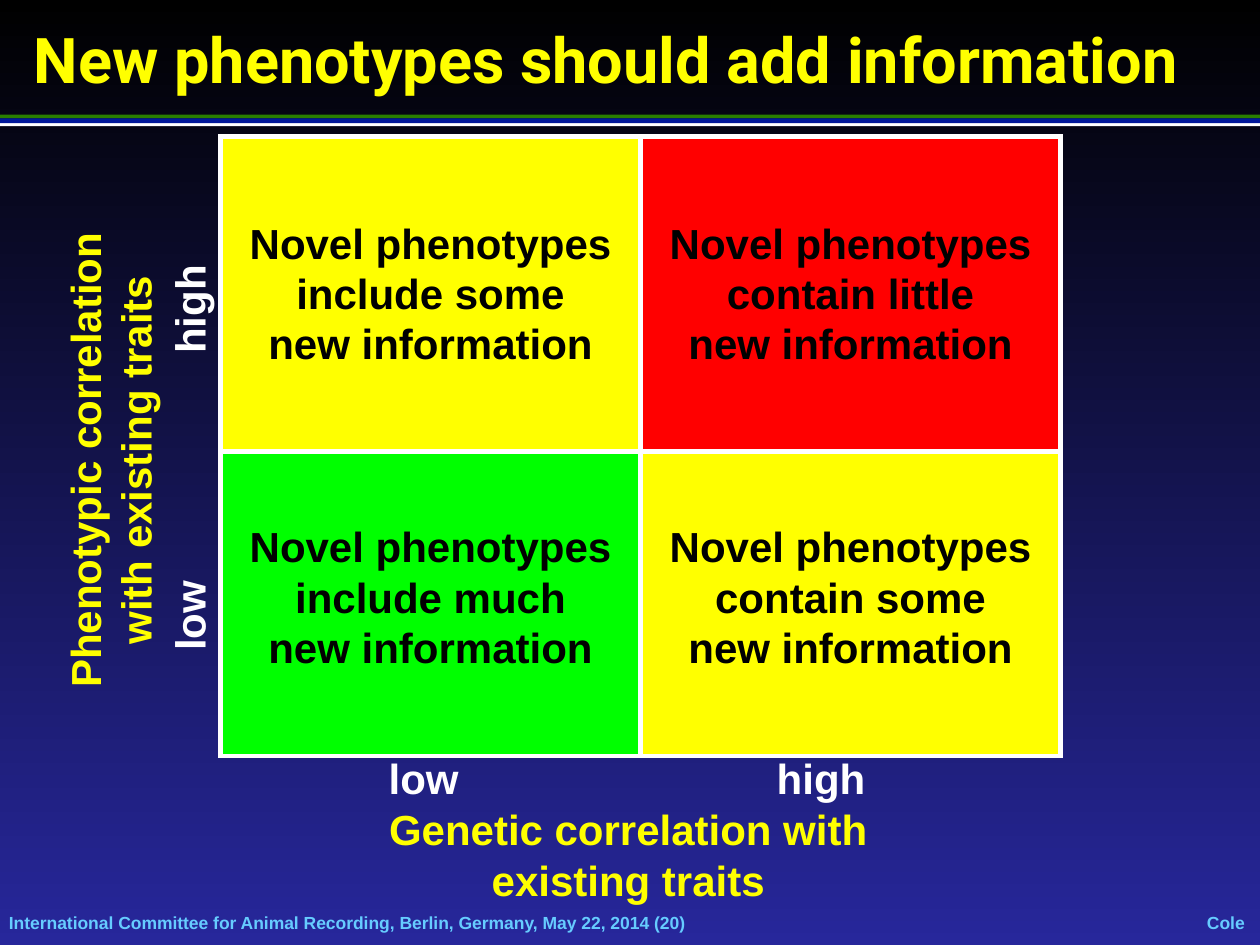
from dataclasses import dataclass

from lxml import etree
from pptx import Presentation
from pptx.dml.color import RGBColor
from pptx.enum.shapes import MSO_SHAPE
from pptx.enum.text import MSO_ANCHOR, PP_ALIGN
from pptx.oxml.ns import qn
from pptx.util import Pt

RECT = MSO_SHAPE.RECTANGLE
LEFT, CENTER = PP_ALIGN.LEFT, PP_ALIGN.CENTER
TOP, MIDDLE = MSO_ANCHOR.TOP, MSO_ANCHOR.MIDDLE


@dataclass(frozen=True)
class Theme:
    black: str = "000000"
    navy: str = "27279B"
    white: str = "FFFFFF"
    yellow: str = "FFFF00"
    red: str = "FF0000"
    lime: str = "00FF00"
    sky: str = "66CCFF"
    green: str = "2A7E00"
    blue: str = "001799"
    head: str = "Roboto"
    body: str = "Arial"
    title: int = 36
    label: int = 24
    foot: int = 10


T = Theme()
WIDE, HIGH = 720, 540
# Matrix origin, column width and row heights
X, Y, COL, ROWS = 126, 78, 240, (180, 174)
CELLS = (
    ((T.yellow, "include some"), (T.red, "contain little")),
    ((T.lime, "include much"), (T.yellow, "contain some")),
)


def rgb(code):
    return RGBColor.from_string(code)


def place(shape, x, y, w, h):
    shape.left, shape.top, shape.width, shape.height = map(Pt, (x, y, w, h))


def write(shape, text, size=T.label, color=T.white, font=T.body,
          align=LEFT, anchor=TOP, wrap=False, inset=(7.2, 3.6)):
    """Fill a shape with bold text, one paragraph a line."""
    frame = shape.text_frame
    frame.word_wrap = wrap
    frame.vertical_anchor = anchor
    frame.margin_left = frame.margin_right = Pt(inset[0])
    frame.margin_top = frame.margin_bottom = Pt(inset[1])
    frame.text = text
    for para in frame.paragraphs:
        para.alignment = align
        face = para.runs[0].font
        face.name, face.size, face.bold = font, Pt(size), True
        face.color.rgb = rgb(color)


def label(slide, text, mid, area, turn=0, **form):
    """Add a text box around a middle point."""
    (x, y), (w, h) = mid, area
    box = slide.shapes.add_textbox(
        Pt(x - w / 2), Pt(y - h / 2), Pt(w), Pt(h))
    box.rotation = turn
    write(box, text, **form)


def paint(slide):
    fill = slide.background.fill
    fill.gradient()
    fill.gradient_angle = 270
    for stop, color in zip(fill.gradient_stops, (T.black, T.navy)):
        stop.color.rgb = rgb(color)


def stripe(slide, y, h, color):
    bar = slide.shapes.add_shape(RECT, 0, Pt(y), Pt(WIDE), Pt(h))
    bar.shadow.inherit = False
    bar.fill.solid()
    bar.fill.fore_color.rgb = rgb(color)
    bar.line.fill.background()


def edge(cell, color, width):
    """Draw all four borders; they must come before the cell fill."""
    props = cell._tc.get_or_add_tcPr()
    for side in ("a:lnL", "a:lnR", "a:lnT", "a:lnB"):
        line = etree.SubElement(props, qn(side), w=str(Pt(width)))
        fill = etree.SubElement(line, qn("a:solidFill"))
        etree.SubElement(fill, qn("a:srgbClr"), val=color)


def matrix(slide):
    grid = slide.shapes.add_table(
        2, 2, Pt(X), Pt(Y), Pt(2 * COL), Pt(sum(ROWS))).table
    grid.first_row = grid.horz_banding = False
    for r, row in enumerate(CELLS):
        grid.rows[r].height = Pt(ROWS[r])
        for c, (color, _) in enumerate(row):
            cell = grid.cell(r, c)
            edge(cell, T.white, 3)
            cell.fill.solid()
            cell.fill.fore_color.rgb = rgb(color)


def notes(slide):
    """Lay the wording over the middle of each matrix cell."""
    for row, y in zip(CELLS, (167.5, 341)):
        for c, (_, text) in enumerate(row):
            label(slide, f"Novel phenotypes\n{text}\nnew information",
                  (X + COL * (c + 0.5), y), (223, 94),
                  color=T.black, align=CENTER)


def axes(slide):
    low, high = ("low", (55, 36)), ("high", (65.5, 36))
    # Genetic axis, across
    for (text, area), x in ((low, 242.5), (high, 469.5)):
        label(slide, text, (x, 444.5), area)
    label(slide, "Genetic correlation with\nexisting traits",
          (359, 488.5), (291, 65.5), color=T.yellow, align=CENTER)
    # Phenotypic axis, upward
    for (text, area), y in ((low, 351.5), (high, 176.5)):
        label(slide, text, (108, y), area, turn=270)
    label(slide, "Phenotypic correlation\nwith existing traits",
          (63, 263), (277, 65.5), turn=270, color=T.yellow, align=CENTER)


def footer(slide):
    form = dict(size=T.foot, color=T.sky, anchor=MIDDLE, inset=(0, 0))
    label(slide, "International Committee for Animal Recording, "
          "Berlin, Germany, May 22, 2014 (20)",
          (296.3, 527.4), (582.5, 12.2), wrap=True, **form)
    label(slide, "Cole", (700.5, 527.4), (21.6, 12.2), align=CENTER, **form)


def main():
    deck = Presentation()
    deck.slide_width, deck.slide_height = Pt(WIDE), Pt(HIGH)
    slide = deck.slides.add_slide(deck.slide_layouts[5])
    paint(slide)
    footer(slide)

    # Rule under the title
    for y, h, color in ((65.5, 2.2, T.green), (70, 2.2, T.white),
                        (67.7, 2.7, T.blue)):
        stripe(slide, y, h, color)

    # Title
    title = slide.shapes.title
    place(title, 12.2, 8, 695.5, 50.4)
    write(title, "New phenotypes should add information", size=T.title,
          color=T.yellow, font=T.head, anchor=MIDDLE, wrap=True)

    matrix(slide)
    axes(slide)
    notes(slide)
    deck.save("out.pptx")


if __name__ == "__main__":
    main()
